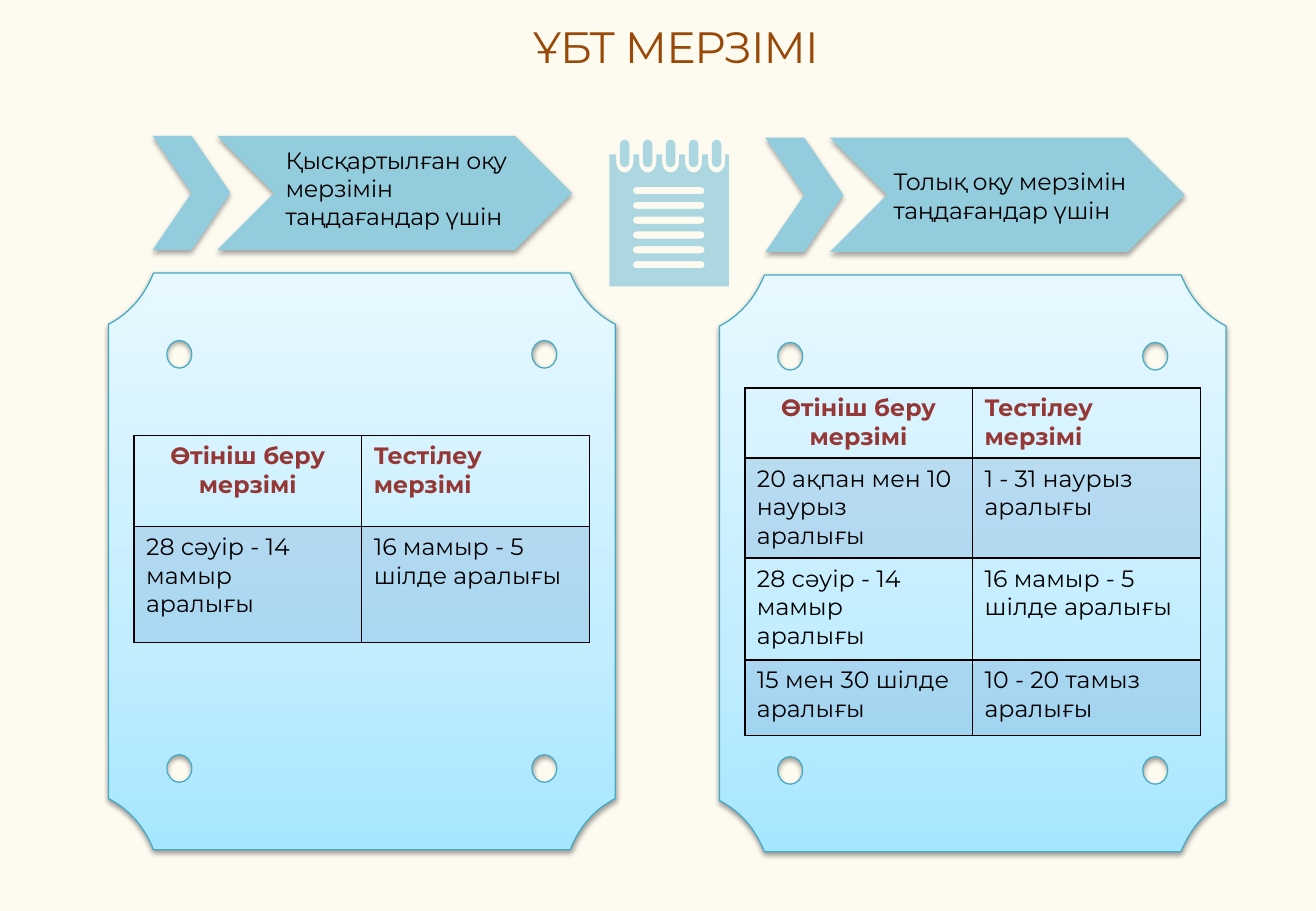
import math
from dataclasses import dataclass

import pptx
import pptx.dml.color
import pptx.enum.shapes
import pptx.enum.text
import pptx.oxml
import pptx.oxml.ns
import pptx.util

Cm = pptx.util.Cm
RGB = pptx.dml.color.RGBColor
Align = pptx.enum.text.PP_ALIGN
qn = pptx.oxml.ns.qn
NS = pptx.oxml.ns.nsdecls("a")

CREAM = RGB(0xFD, 0xFA, 0xF0)
BROWN = RGB(0x98, 0x48, 0x07)
RED = RGB(0x95, 0x37, 0x35)
BLACK = RGB(0, 0, 0)
TEAL = RGB(0x93, 0xCD, 0xDD)
EDGE = RGB(0x46, 0xAA, 0xC5)
BLUE = RGB(0x4F, 0x81, 0xBD)
STOPS = ((0, RGB(0xA7, 0xE6, 0xFF)), (35, RGB(0xC1, 0xED, 0xFF)),
         (100, RGB(0xE7, 0xF8, 0xFF)))

# A step is one point (line) or three points (cubic curve)
Step = list[tuple[float, float]]
Path = list[Step]

HEAD = ("Өтініш беру\nмерзімі", "Тестілеу мерзімі")
SPRING = ("28 сәуір - 14 мамыр аралығы", "16 мамыр - 5 шілде аралығы")


@dataclass
class Side:
    """One half of the slide: arrows, plaque and table (cm)."""
    x: float
    y: float
    arrow_x: float
    label: str
    label_box: tuple[float, float, float, float]
    grid_y: float
    rows: list[tuple[str, str]]
    highs: list[float]


SIDES = [
    Side(2.27, 5.71, 4.54, "Қысқартылған оқу мерзімін таңдағандар үшін",
         (5.72, 2.92, 5.97, 2.06), 9.11, [HEAD, SPRING], [1.9, 2.43]),
    Side(15.04, 5.75, 17.35, "Толық оқу мерзімін таңдағандар үшін",
         (18.43, 3.37, 5.97, 1.45), 8.11,
         [HEAD, ("20 ақпан мен 10 наурыз аралығы", "1 - 31 наурыз аралығы"),
          SPRING, ("15 мен 30 шілде аралығы", "10 - 20 тамыз аралығы")],
         [1.47, 2.09, 2.13, 1.58]),
]


# Helpers
def box(*cms: float) -> list[int]:
    return [Cm(c) for c in cms]


def arc(cx: float, cy: float, rx: float, ry: float,
        start: float, turns: int, way: int = 1) -> Path:
    """Quarter turns of an ellipse, led by the starting point."""
    def spot(deg: float, pull: float) -> tuple[float, float]:
        t = math.radians(deg)
        return (cx + rx * (math.cos(t) - pull * math.sin(t)),
                cy + ry * (math.sin(t) + pull * math.cos(t)))

    path = [[spot(start, 0)]]
    for i in range(turns):
        a, b = start + 90 * way * i, start + 90 * way * (i + 1)
        path.append([spot(a, 0.5523 * way), spot(b, -0.5523 * way), spot(b, 0)])
    return path


def pill(x: float, y: float, w: float, h: float) -> Path:
    r = min(w, h) / 2
    first = -90 if w > h else 0
    return (arc(x + w - r, y + h - r, r, r, first, 2)
            + arc(x + r, y + r, r, r, first + 180, 2))


def trace(shapes, paths: list[Path]):
    """Join closed paths, in cm, into one freeform with curves."""
    pen = None
    for path in paths:
        dots = [(x * 1000, y * 1000) for step in path for x, y in step]
        if pen is None:
            pen = shapes.build_freeform(*dots[0], scale=360.0)
        else:
            pen.move_to(*dots[0])
        pen.add_line_segments(dots[1:], close=True)
    shape = pen.convert_to_shape()
    shape.shadow.inherit = False
    nodes = iter(list(shape._element.iter(qn("a:lnTo"))))
    for step in (step for path in paths for step in path[1:]):
        group = [next(nodes) for _ in step]
        if len(group) == 3:
            curve = pptx.oxml.parse_xml(f"<a:cubicBezTo {NS}/>")
            group[0].addprevious(curve)
            for node in group:
                curve.append(node[0])
                node.getparent().remove(node)
    return shape


def paint(fill, hue: RGB, alpha: int = 100) -> None:
    fill.solid()
    fill.fore_color.rgb = hue
    if alpha < 100:
        node = fill._xPr.find(qn("a:solidFill"))[0]
        node.append(pptx.oxml.parse_xml(f'<a:alpha {NS} val="{alpha * 1000}"/>'))


def shade(shape, alpha: int) -> None:
    shape.shadow.inherit = False
    shape._element.spPr.find(qn("a:effectLst")).append(pptx.oxml.parse_xml(
        f'<a:outerShdw {NS} blurRad="40000" dist="21000" dir="5400000" '
        f'rotWithShape="0"><a:srgbClr val="000000"><a:alpha val="{alpha * 1000}"/>'
        '</a:srgbClr></a:outerShdw>'))


def style(para, size: float, hue: RGB, bold: bool = False, gap: int = 0) -> None:
    for run in para.runs:
        look = {"name": "Montserrat", "size": pptx.util.Pt(size), "bold": bold}
        for key, val in look.items():
            setattr(run.font, key, val)
        run.font.color.rgb = hue
        if gap:
            run._r.get_or_add_rPr().set("spc", str(gap))


def write(shapes, area: list[int], text: str, size: float, hue: RGB, gap: int):
    frame = shapes.add_textbox(*area).text_frame
    frame.word_wrap = True
    frame.auto_size = pptx.enum.text.MSO_AUTO_SIZE.SHAPE_TO_FIT_TEXT
    frame.text = text
    style(frame.paragraphs[0], size, hue, gap=gap)
    return frame


# Parts
def plaque(shapes, x: float, y: float) -> None:
    w, h, rx, ry = 10.59, 12.06, 0.94, 1.07
    rim: Path = []
    for sx, sy in ((1, 0), (1, 1), (0, 1), (0, 0)):
        bend = [(x + w * sx + rx * (1 - 2 * sx) * u, y + h * sy + ry * (1 - 2 * sy) * v)
                for u, v in ((1, 0), (0.79, 0.46), (0.46, 0.79), (0, 1))]
        if sx == sy:
            bend.reverse()
        rim += [bend[:1], bend[1:]]
    holes = [arc(cx, cy, 0.26, 0.29, 0, 4)
             for cx in (x + 1.48, x + w - 1.48) for cy in (y + 1.7, y + h - 1.7)]
    shape = trace(shapes, [rim] + holes)
    stops = "".join(f'<a:gs pos="{pos * 1000}"><a:srgbClr val="{hue}"/></a:gs>'
                    for pos, hue in STOPS)
    shape.fill.gradient()
    old = shape._element.spPr.find(qn("a:gradFill"))
    old.getparent().replace(old, pptx.oxml.parse_xml(
        f'<a:gradFill {NS} rotWithShape="1"><a:gsLst>{stops}</a:gsLst>'
        '<a:lin ang="16200000" scaled="0"/></a:gradFill>'))
    shape.line.color.rgb = EDGE
    shape.line.width = pptx.util.Pt(0.75)
    shade(shape, 38)


def arrows(shapes, x: float, y: float) -> None:
    for left, w in ((x, 7.42), (x - 1.35, 1.63)):
        shape = shapes.add_shape(pptx.enum.shapes.MSO_SHAPE.CHEVRON,
                                 *box(left, y, w, 2.39))
        shape.adjustments[0] = 0.5
        paint(shape.fill, TEAL)
        shape.line.fill.background()
        shade(shape, 35)


def grid(shapes, side: Side) -> None:
    table = shapes.add_table(len(side.rows), 2, *box(
        side.x + 0.53, side.grid_y, 9.52, sum(side.highs))).table
    table.first_row = table.horz_banding = False
    for r, (texts, high) in enumerate(zip(side.rows, side.highs)):
        table.rows[r].height = Cm(high)
        for c, text in enumerate(texts):
            cell = table.cell(r, c)
            cell.text = text
            if r:
                cell.margin_right = Cm(0.38)
            for para in cell.text_frame.paragraphs:
                style(para, 14, BLACK if r else RED, bold=r == 0)
                para.alignment = Align.LEFT if r or c else Align.CENTER
            if r % 2:
                paint(cell.fill, BLUE, 20)
            else:
                cell.fill.background()
            for i, edge in enumerate("LRTB"):
                cell._tc.get_or_add_tcPr().insert(i, pptx.oxml.parse_xml(
                    f'<a:ln{edge} {NS} w="12700"><a:solidFill><a:srgbClr '
                    f'val="{BLACK}"/></a:solidFill></a:ln{edge}>'))


def notepad(shapes) -> None:
    left, top, right, base = 12.74, 3.23, 15.24, 5.99
    rings = [13.06 + 0.48 * i for i in range(5)]
    page: Path = [[(left, top)]]
    for cx in rings:
        page += [[(cx - 0.18, top)], *arc(cx, 3.38, 0.18, 0.23, 180, 2, -1),
                 [(cx + 0.18, top)]]
    page += [[(right, top)], [(right, base)], [(left, base)]]
    lines = [pill(13.23, 3.91 + 0.31 * i, 1.5, 0.15) for i in range(6)]
    loops = [pill(cx - 0.1, 2.92, 0.2, 0.58) for cx in rings]
    shape = trace(shapes, [page] + lines + loops)
    paint(shape.fill, TEAL, 76)
    shape.line.fill.background()


def main() -> None:
    deck = pptx.Presentation()
    deck.slide_width, deck.slide_height = box(27.51, 19.05)
    slide = deck.slides.add_slide(deck.slide_layouts[6])
    paint(slide.background.fill, CREAM)
    shapes = slide.shapes

    # Title
    title = write(shapes, box(4.81, 0.41, 18.64, 1.12), "ҰБТ МЕРЗІМІ", 26, BROWN, -50)
    for key in ("left", "top", "right", "bottom"):
        setattr(title, f"margin_{key}", 0)
    title.paragraphs[0].alignment = Align.CENTER

    # Two sides
    for side in SIDES:
        plaque(shapes, side.x, side.y)
        arrows(shapes, side.arrow_x, side.y - 2.87)
        write(shapes, box(*side.label_box), side.label, 14, BLACK, -20)
        grid(shapes, side)

    notepad(shapes)
    deck.save("out.pptx")


if __name__ == "__main__":
    main()
